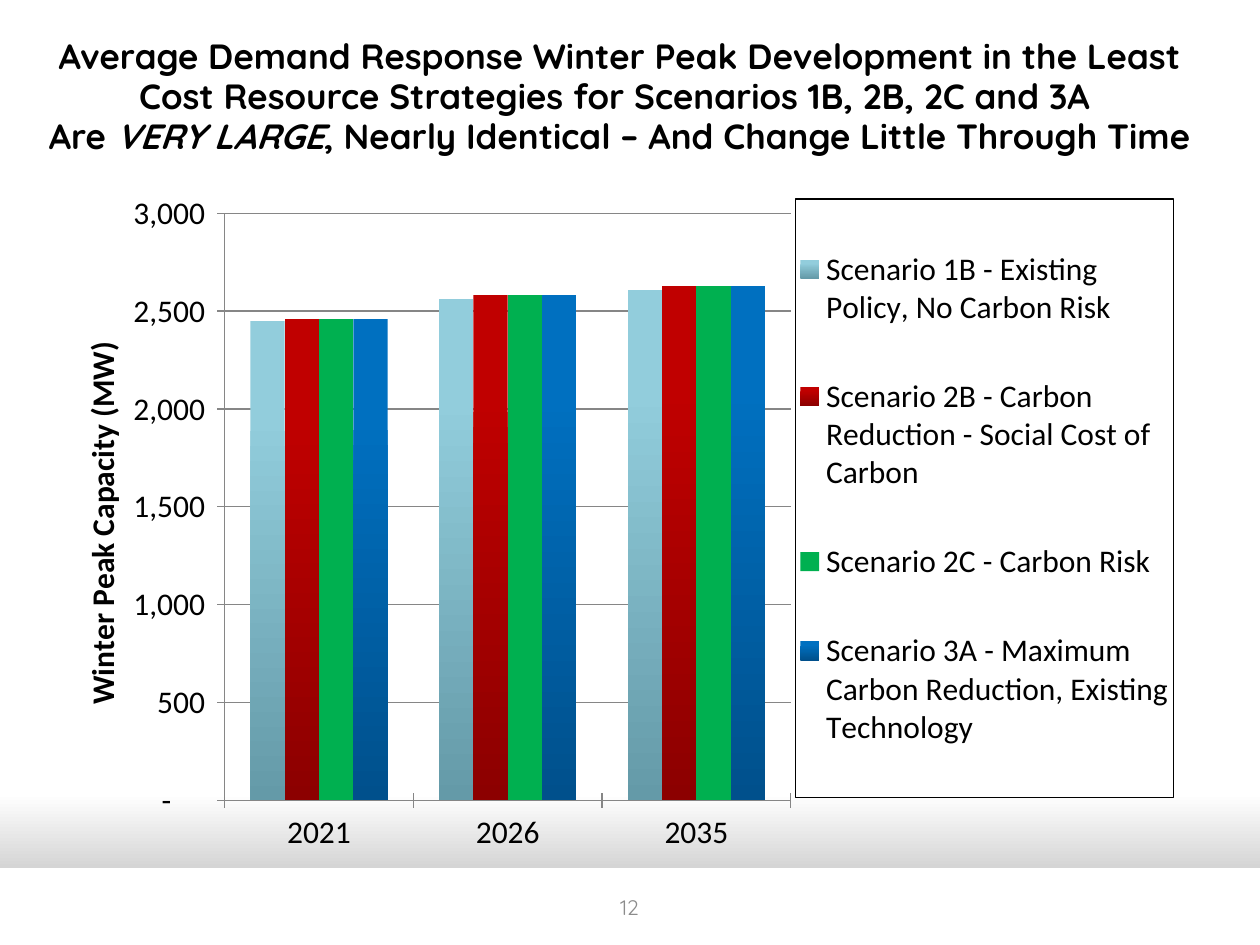
from lxml import etree
from pptx import Presentation
from pptx.chart.data import CategoryChartData
from pptx.dml.color import RGBColor
from pptx.enum.chart import XL_CHART_TYPE, XL_LEGEND_POSITION, XL_TICK_MARK
from pptx.enum.shapes import MSO_SHAPE
from pptx.enum.text import MSO_ANCHOR, PP_ALIGN
from pptx.oxml import parse_xml
from pptx.oxml.ns import nsdecls, qn
from pptx.util import Cm, Pt

COLUMNS = XL_CHART_TYPE.COLUMN_CLUSTERED
BOTTOM = XL_LEGEND_POSITION.BOTTOM
CROSS = XL_TICK_MARK.CROSS
RECT = MSO_SHAPE.RECTANGLE
MIDDLE = MSO_ANCHOR.MIDDLE
CENTER = PP_ALIGN.CENTER

COLORS = {
    "white": "FFFFFF", "black": "000000", "shade": "A6A6A6",
    "number": "8C8C8C", "line": "868686",
    "sky": "92CDDC", "sky_dark": "649AA8",
    "red": "C00000", "red_dark": "8C0000",
    "green": "00B050", "blue": "0070C0", "blue_dark": "00508C",
}
YEARS = ["2021", "2026", "2035"]
SERIES = [
    ("Scenario 1B - Existing Policy, No Carbon Risk",
     (2450, 2560, 2610), "sky", "sky_dark"),
    ("Scenario 2B - Carbon Reduction - Social Cost of Carbon",
     (2460, 2580, 2630), "red", "red_dark"),
    ("Scenario 2C - Carbon Risk", (2460, 2580, 2630), "green", None),
    ("Scenario 3A - Maximum Carbon Reduction, Existing Technology",
     (2460, 2580, 2630), "blue", "blue_dark"),
]
NUMBER_FORMAT = '_(* #,##0_);_(* \\(#,##0\\);_(* "-"??_);_(@_)'
TITLE = [
    ("Average Demand Response Winter Peak Development in the Least "
     "Cost Resource Strategies for Scenarios 1B, 2B, 2C and 3A ", {}),
    None,
    ("Are ", {}),
    ("VERY LARGE", {"italic": True}),
    (", Nearly Identical – And Change Little Through Time", {}),
]


def rgb(name):
    return RGBColor.from_string(COLORS[name])


def apply(obj, values):
    for key, value in values.items():
        setattr(obj, key, value)


def set_font(font, color, values):
    apply(font, values)
    font.color.rgb = rgb(color)


def set_gradient(fill, stops):
    fill.gradient()
    fill.gradient_angle = 270
    for stop, (position, color) in zip(fill.gradient_stops, stops):
        stop.position = position
        stop.color.rgb = rgb(color)


def make_layout(inner=False, **fractions):
    layout = etree.Element(qn("c:layout"))
    manual = etree.SubElement(layout, qn("c:manualLayout"))
    if inner:
        etree.SubElement(manual, qn("c:layoutTarget")).set("val", "inner")
    for key in ("x", "y"):
        etree.SubElement(manual, qn(f"c:{key}Mode")).set("val", "edge")
    for key, value in fractions.items():
        etree.SubElement(manual, qn(f"c:{key}")).set("val", str(value))
    return layout


def place(parent, layout, after=None):
    for old in parent.findall(qn("c:layout")):
        parent.remove(old)
    if after is None:
        parent.insert(0, layout)
    else:
        parent.find(qn(after)).addnext(layout)


class SlideBuilder:
    """Holds the style and the current slide, and adds its elements."""

    heading = {"name": "Quicksand", "size": Pt(20), "bold": True}
    footer = {"name": "Quicksand", "size": Pt(12)}
    body = {"name": "Calibri", "size": Pt(18), "bold": False}

    def __init__(self, prs):
        self.s = prs.slides.add_slide(prs.slide_layouts[6])

    def background(self, stops):
        set_gradient(self.s.background.fill, stops)

    def band(self, box, color):
        sp = self.s.shapes.add_shape(RECT, *map(Cm, box))
        sp.shadow.inherit = False
        sp.fill.solid()
        sp.fill.fore_color.rgb = rgb(color)
        sp.line.fill.background()

    def text(self, box, runs, color, style, spacing=None):
        tf = self.s.shapes.add_textbox(*map(Cm, box)).text_frame
        apply(tf, {"word_wrap": True, "vertical_anchor": MIDDLE})
        p = tf.paragraphs[0]
        apply(p, {"alignment": CENTER, "line_spacing": spacing})
        for run in runs:
            if run is None:
                p.add_line_break()
                continue
            r = p.add_run()
            r.text, extra = run
            set_font(r.font, color, {**style, **extra})

    def chart(self, box, axis_title):
        data = CategoryChartData()
        data.categories = YEARS
        for name, values, *_ in SERIES:
            data.add_series(name, values)
        chart = self.s.shapes.add_chart(COLUMNS, *map(Cm, box), data).chart
        chart.has_title = False
        set_font(chart.font, "black", self.body)
        place(chart.plots[0]._element.getparent(),
              make_layout(True, x=0.14, y=0.05, w=0.49, h=0.86))
        self.columns(chart.plots[0])
        self.axes(chart, axis_title)
        self.legend(chart)

    def columns(self, plot):
        apply(plot, {"gap_width": 150, "overlap": 0,
                     "vary_by_categories": False})
        for series, (_, _, color, dark) in zip(plot.series, SERIES):
            fill = series.format.fill
            if dark:
                set_gradient(fill, [(0.2, color), (1, dark)])
            else:
                fill.solid()
                fill.fore_color.rgb = rgb(color)

    def axes(self, chart, title):
        axis = chart.value_axis
        apply(axis, {"minimum_scale": 0, "maximum_scale": 3000,
                     "major_unit": 500, "has_major_gridlines": True})
        apply(axis.tick_labels, {"number_format": NUMBER_FORMAT,
                                 "number_format_is_linked": False})
        for item in (axis, chart.category_axis):
            item.major_tick_mark = CROSS
        for item in (axis, chart.category_axis, axis.major_gridlines):
            item.format.line.color.rgb = rgb("line")
            item.format.line.width = Pt(0.75)
        p = axis.axis_title.text_frame.paragraphs[0]
        r = p.add_run()
        r.text = title
        set_font(r.font, "black", {**self.body, "bold": True})
        place(axis.axis_title._element, make_layout(x=0.01, y=0.23), "c:tx")

    def legend(self, chart):
        chart.has_legend = True
        legend = chart.legend
        apply(legend, {"position": BOTTOM, "include_in_layout": False})
        set_font(legend.font, "black", self.body)
        element = legend._element
        place(element, make_layout(x=0.634, y=0.029, w=0.327, h=0.876),
              "c:legendPos")
        element.find(qn("c:overlay")).addnext(parse_xml(
            f'<c:spPr {nsdecls("c", "a")}><a:ln w="9525"><a:solidFill>'
            f'<a:srgbClr val="{COLORS["black"]}"/>'
            '</a:solidFill></a:ln></c:spPr>'))


def main():
    prs = Presentation()
    apply(prs, {"slide_width": Cm(25.4), "slide_height": Cm(19.05)})
    slide = SlideBuilder(prs)
    slide.background([(0.84, "white"), (1, "shade")])
    slide.band((0, 17.5, 25.4, 1.55), "white")
    slide.text((0.43, 0.76, 24.13, 2.41), TITLE, "black",
               slide.heading, 0.96)
    slide.chart((1.27, 3.61, 23.29, 13.77), "Winter Peak Capacity (MW)")
    slide.text((9.73, 17.78, 5.92, 1.02), [("12", {})], "number",
               slide.footer)
    prs.save("out.pptx")


if __name__ == "__main__":
    main()
